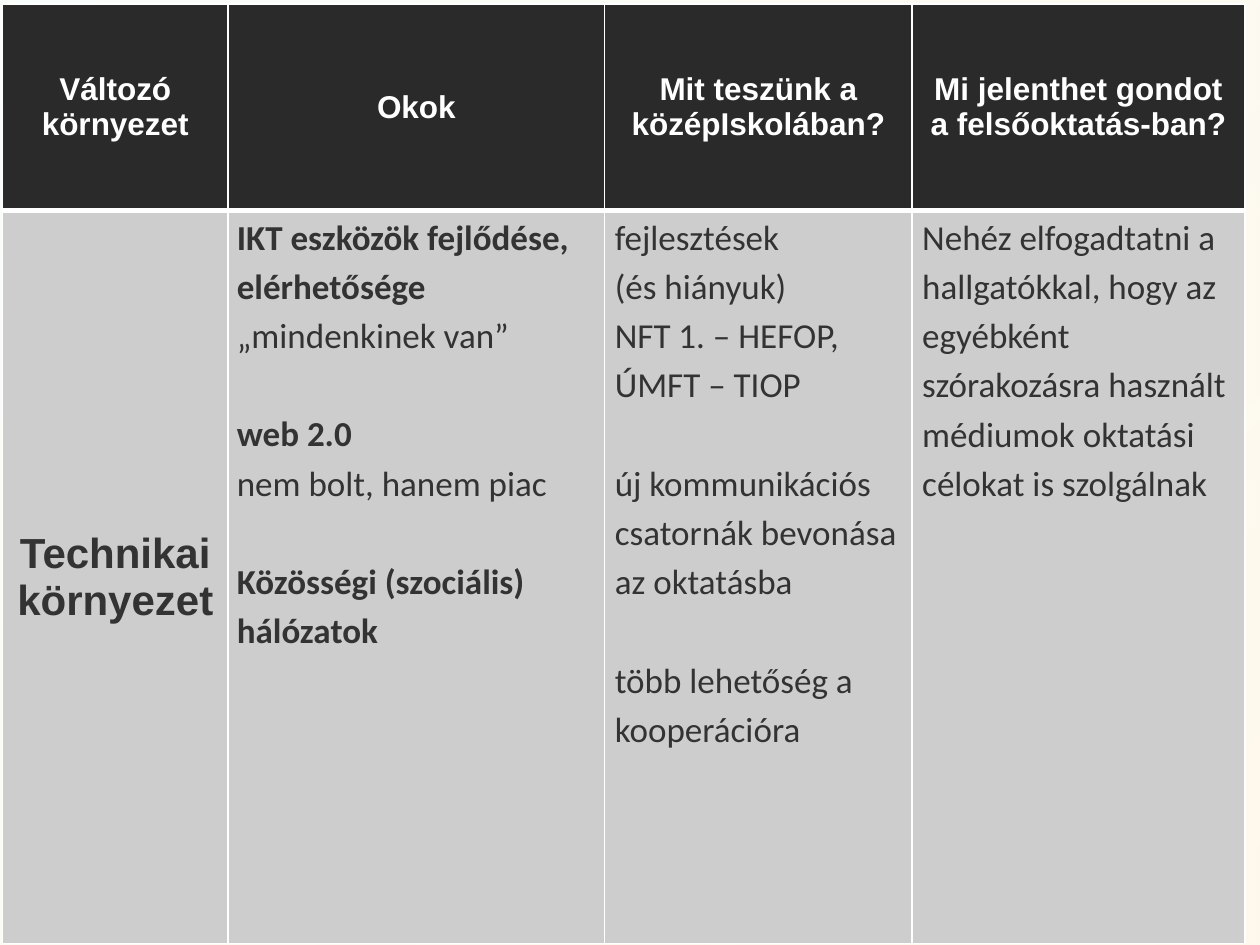
from dataclasses import dataclass

from lxml import etree
from pptx import Presentation
from pptx.dml.color import RGBColor
from pptx.enum.shapes import MSO_SHAPE
from pptx.enum.text import MSO_ANCHOR, PP_ALIGN
from pptx.oxml.ns import qn
from pptx.util import Inches, Pt

RECTANGLE = MSO_SHAPE.RECTANGLE
MIDDLE, TOP = MSO_ANCHOR.MIDDLE, MSO_ANCHOR.TOP
CENTER, LEFT = PP_ALIGN.CENTER, PP_ALIGN.LEFT


@dataclass(frozen=True)
class Theme:
    header_fill: str = "2A2A2A"
    body_fill: str = "CDCDCD"
    header_text: str = "FFFFFF"
    body_text: str = "333333"
    border: str = "FFFFFF"
    backdrop: tuple = (("F2FDF7", 48), ("FFEFCC", 36))
    heading_font: str = "Arial"
    body_font: str = "Calibri"
    header_size: int = 18
    topic_size: int = 24
    body_size: int = 20
    line_spacing: float = 1.15
    gap: int = 28
    thin: int = 1
    thick: int = 3


THEME = Theme()
WIDTH, HEIGHT = 10, 7.5
COLUMNS = (1.79, 2.99, 2.44, 2.64)
ROWS = (1.64, 5.82)
HEADERS = (
    "Változó környezet",
    "Okok",
    "Mit teszünk a középIskolában?",
    "Mi jelenthet gondot a felsőoktatás-ban?",
)
TOPIC = "Technikai környezet"
CAUSES = (
    ((("IKT eszközök fejlődése, elérhetősége ", True), ("„mindenkinek van”", False)),),
    ((("web 2.0", True),), (("nem bolt, hanem piac", False),)),
    ((("Közösségi (szociális) hálózatok", True),),),
)
ACTIONS = (
    ("fejlesztések", "(és hiányuk)", "NFT 1. – HEFOP,", "ÚMFT – TIOP"),
    ("új kommunikációs csatornák bevonása az oktatásba",),
    ("több lehetőség a kooperációra",),
)
PROBLEMS = (
    ("Nehéz elfogadtatni a hallgatókkal, hogy az egyébként szórakozásra "
     "használt médiumok oktatási célokat is szolgálnak",),
)


def write_text(paragraph, text, *, font, size, color, bold=False, align=LEFT, spacing=None):
    paragraph.alignment = align
    paragraph.line_spacing = spacing
    run = paragraph.add_run()
    run.text = text
    run.font.name = font
    run.font.size = Pt(size)
    run.font.bold = bold
    run.font.color.rgb = RGBColor.from_string(color)


def add_backdrop(slide):
    shape = slide.shapes.add_shape(RECTANGLE, 0, 0, Inches(WIDTH), Inches(HEIGHT))
    shape.shadow.inherit = False
    shape.line.fill.background()
    shape.fill.gradient()
    shape.fill.gradient_angle = 315
    for stop, (color, opacity) in zip(shape.fill.gradient_stops, THEME.backdrop):
        stop.color.rgb = RGBColor.from_string(color)
    stops = shape.fill._xPr.iter(qn("a:srgbClr"))
    for element, (color, opacity) in zip(stops, THEME.backdrop):
        etree.SubElement(element, qn("a:alpha"), val=str(opacity * 1000))
    first, last = shape.fill.gradient_stops
    first.position, last.position = 0, 1


def set_borders(cell, top, bottom):
    properties = cell._tc.get_or_add_tcPr()
    sides = (("L", THEME.thin), ("R", THEME.thin), ("T", top), ("B", bottom))
    for index, (side, width) in enumerate(sides):
        line = etree.Element(qn(f"a:ln{side}"), w=str(Pt(width)))
        fill = etree.SubElement(line, qn("a:solidFill"))
        etree.SubElement(fill, qn("a:srgbClr"), val=THEME.border)
        properties.insert(index, line)


def style_cell(cell, fill, anchor, top, bottom):
    cell.fill.solid()
    cell.fill.fore_color.rgb = RGBColor.from_string(fill)
    cell.vertical_anchor = anchor
    set_borders(cell, top, bottom)


def fill_heading(cell, text, size, color):
    write_text(cell.text_frame.paragraphs[0], text, font=THEME.heading_font,
               size=size, color=color, bold=True, align=CENTER)


def fill_body(cell, groups, margin):
    cell.margin_left = Inches(margin)
    cell.margin_right = Inches(0.07)
    cell.margin_top = cell.margin_bottom = 0
    frame = cell.text_frame
    paragraph = None
    for group in groups:
        for position, line in enumerate(group):
            is_first = paragraph is None
            paragraph = frame.paragraphs[0] if is_first else frame.add_paragraph()
            if position == 0 and not is_first:
                paragraph.space_before = Pt(THEME.gap)
            pieces = ((line, False),) if isinstance(line, str) else line
            for text, bold in pieces:
                write_text(paragraph, text, font=THEME.body_font, size=THEME.body_size,
                           color=THEME.body_text, bold=bold, spacing=THEME.line_spacing)


def add_topic_table(slide):
    frame = slide.shapes.add_table(
        len(ROWS), len(COLUMNS), Inches(0.02), Inches(0.03),
        Inches(sum(COLUMNS)), Inches(sum(ROWS)))
    table = frame.table
    table.horz_banding = False
    for column, width in zip(table.columns, COLUMNS):
        column.width = Inches(width)
    for row, height in zip(table.rows, ROWS):
        row.height = Inches(height)
    for index, text in enumerate(HEADERS):
        header, body = table.cell(0, index), table.cell(1, index)
        style_cell(header, THEME.header_fill, MIDDLE, THEME.thin, THEME.thick)
        style_cell(body, THEME.body_fill, TOP if index else MIDDLE, THEME.thick, THEME.thin)
        fill_heading(header, text, THEME.header_size, THEME.header_text)
    fill_heading(table.cell(1, 0), TOPIC, THEME.topic_size, THEME.body_text)
    bodies = ((CAUSES, 0.07), (ACTIONS, 0.08), (PROBLEMS, 0.08))
    for index, (groups, margin) in enumerate(bodies, start=1):
        fill_body(table.cell(1, index), groups, margin)


def main():
    presentation = Presentation()
    presentation.slide_width = Inches(WIDTH)
    presentation.slide_height = Inches(HEIGHT)
    slide = presentation.slides.add_slide(presentation.slide_layouts[6])
    add_backdrop(slide)
    add_topic_table(slide)
    presentation.save("out.pptx")


if __name__ == "__main__":
    main()
